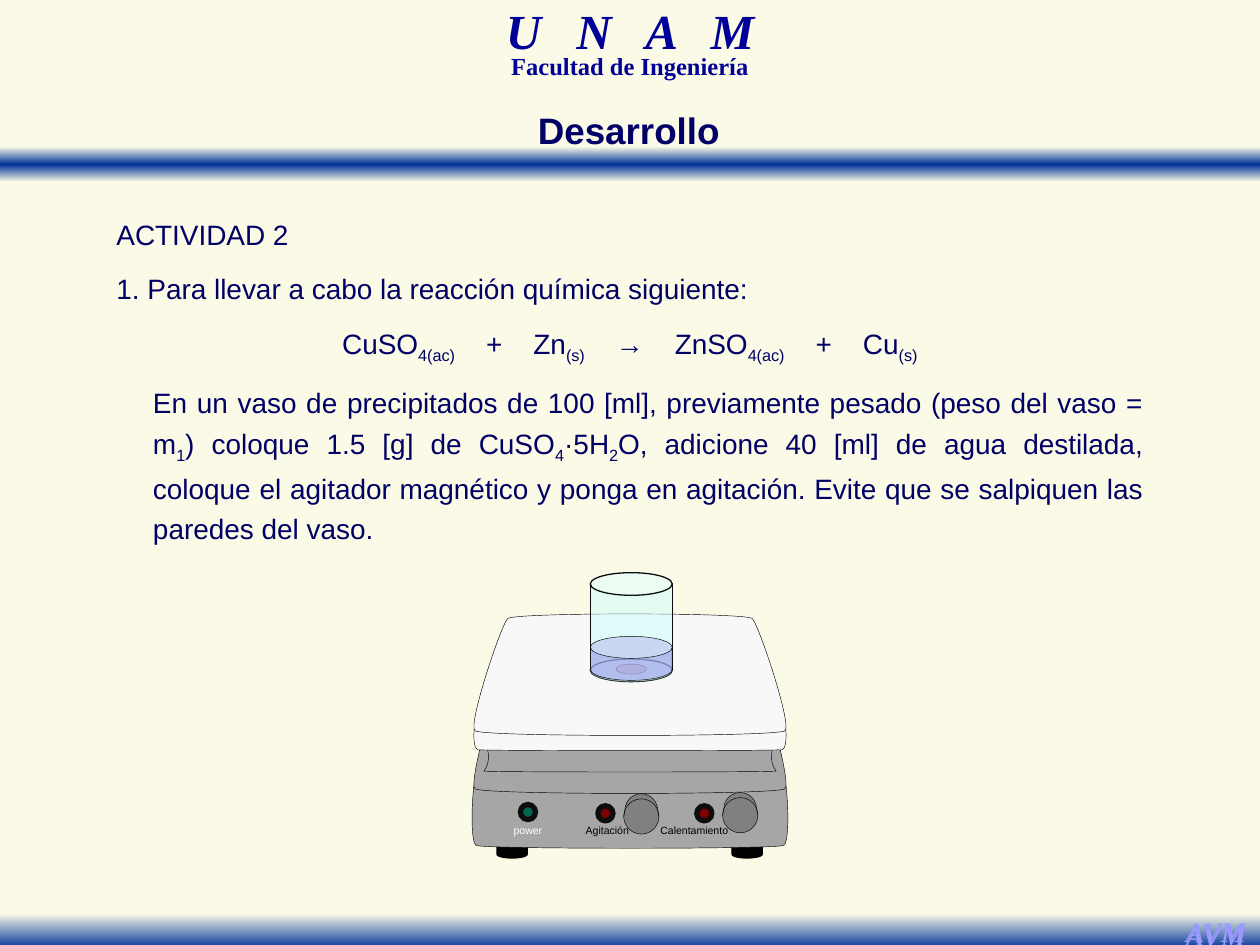
from copy import deepcopy
from dataclasses import dataclass
from typing import NamedTuple, Optional

from lxml import etree
from pptx import Presentation
from pptx.dml.color import RGBColor
from pptx.enum.shapes import MSO_CONNECTOR, MSO_SHAPE
from pptx.enum.text import MSO_ANCHOR, MSO_AUTO_SIZE, PP_ALIGN
from pptx.oxml.ns import qn
from pptx.util import Inches, Pt

RECT, OVAL, CAN = MSO_SHAPE.RECTANGLE, MSO_SHAPE.OVAL, MSO_SHAPE.CAN
STRAIGHT = MSO_CONNECTOR.STRAIGHT
CENTER, JUSTIFY = PP_ALIGN.CENTER, PP_ALIGN.JUSTIFY
TOP = MSO_ANCHOR.TOP
GROW = MSO_AUTO_SIZE.SHAPE_TO_FIT_TEXT

# The slide is a grid of 1000 columns by 750 rows of square cells.
COLS, ROWS = 1000, 750
CELL = Inches(0.01)
HAIR, THIN, RIM = 0.25, 0.75, 3

COLORS = {
    "cream": "FAFAE6", "band": "003399", "school": "000099", "initials": "9999FF",
    "text": "000066", "black": "000000", "white": "FFFFFF", "ink": "0D0D0D",
    "housing": "A6A6A6", "plate": "F8F8F8", "knob": "808080", "green": "00664D",
    "red": "800000", "glass": "CCFFFF", "liquid": "8585E0", "bar": "E0E0E0",
    "bar edge": "858585",
}


class Box(NamedTuple):
    col: float
    row: float
    cols: float
    rows: float


class Run(NamedTuple):
    text: str
    subscript: bool = False
    tracking: float = 0


@dataclass(frozen=True)
class Style:
    size: float
    color: str
    font: str = "Arial"
    bold: bool = False
    italic: bool = False


@dataclass(frozen=True)
class Panel:
    """Left half of a curved outline, in cells; the right half is its mirror image."""
    fill: str
    box: Box
    bottom: tuple
    side_low: tuple
    side_high: tuple
    top: tuple
    top_handle: tuple
    bottom_handle: tuple


def cells(*values: float) -> list:
    return [round(value * CELL) for value in values]


def rgb(name: str) -> RGBColor:
    return RGBColor.from_string(COLORS[name])


def write(paragraph, runs: list, style: Style, align=CENTER, spacing: float = 1) -> None:
    paragraph.alignment, paragraph.line_spacing = align, spacing
    paragraph.space_before = Pt(0)
    for part in runs:
        run = paragraph.add_run()
        run.text = part.text
        font = run.font
        font.name, font.size = style.font, Pt(style.size)
        font.bold, font.italic = style.bold, style.italic
        font.color.rgb = rgb(style.color)
        properties = run._r.get_or_add_rPr()
        if part.subscript:
            properties.set("baseline", "-25000")
        if part.tracking:
            properties.set("spc", str(round(part.tracking * 100)))


def add_label(shapes, box: Box, runs: list, style: Style, spacing: float = 1, wrap: bool = False) -> None:
    frame = shapes.add_textbox(*cells(*box)).text_frame
    frame.word_wrap, frame.auto_size = wrap, GROW
    write(frame.paragraphs[0], runs, style, spacing=spacing)


def paint(shape, fill: Optional[str], line: Optional[str], width: float, alpha: int = 100) -> None:
    shape.shadow.inherit = False
    if fill:
        shape.fill.solid()
        shape.fill.fore_color.rgb = rgb(fill)
        if alpha < 100:
            color = shape._element.spPr.find(f"{qn('a:solidFill')}/{qn('a:srgbClr')}")
            etree.SubElement(color, qn("a:alpha")).set("val", str(alpha * 1000))
    else:
        shape.fill.background()
    if line:
        shape.line.color.rgb = rgb(line)
        shape.line.width = Pt(width)
    else:
        shape.line.fill.background()


def add_part(shapes, kind, box: Box, fill=None, line=None, width=HAIR, alpha=100, lid=None) -> None:
    shape = shapes.add_shape(kind, *cells(*box))
    if lid is not None:
        shape.adjustments[0] = lid
    paint(shape, fill, line, width, alpha)


def add_line(shapes, start: tuple, end: tuple, color: str, width: float) -> None:
    line = shapes.add_connector(STRAIGHT, *cells(*start, *end))
    line.line.color.rgb = rgb(color)
    line.line.width = Pt(width)
    etree.SubElement(line._element.spPr, qn("a:effectLst"))


def add_band(shapes, box: Box, stops: list) -> None:
    """Vertical gradient bar across the slide."""
    band = shapes.add_shape(RECT, *cells(*box))
    paint(band, None, None, 0)
    band.fill.gradient()
    band.fill.gradient_angle = 270
    stop_list = band._element.spPr.find(f".//{qn('a:gsLst')}")
    for _ in stops[2:]:
        stop_list.append(deepcopy(stop_list[0]))
    for stop, (position, color) in zip(band.fill.gradient_stops, stops):
        stop.position, stop.color.rgb = position, rgb(color)


def add_panel(shapes, panel: Panel) -> None:
    """Frame the panel's box, then give its path one Bézier curve per side."""
    def mirror(point: tuple) -> tuple:
        return COLS - point[0], point[1]

    col, row, cols, rows = panel.box
    builder = shapes.build_freeform(*cells(col, row), scale=1.0)
    builder.add_line_segments([cells(col + cols, row), cells(col + cols, row + rows), cells(col, row + rows)])
    outline = builder.convert_to_shape()
    path = outline._element.spPr.find(f".//{qn('a:path')}")
    for segment in list(path):
        path.remove(segment)
    left = [panel.side_low, panel.side_high, panel.top]
    top = [panel.top_handle, mirror(panel.top_handle), mirror(panel.top)]
    right = [mirror(panel.side_high), mirror(panel.side_low), mirror(panel.bottom)]
    base = [mirror(panel.bottom_handle), panel.bottom_handle, panel.bottom]
    for tag, points in (("a:moveTo", [panel.bottom]), *(("a:cubicBezTo", side) for side in (left, top, right, base))):
        segment = etree.SubElement(path, qn(tag))
        for point in points:
            x, y = cells(point[0] - col, point[1] - row)
            etree.SubElement(segment, qn("a:pt"), x=str(x), y=str(y))
    etree.SubElement(path, qn("a:close"))
    paint(outline, panel.fill, "black", HAIR)


def add_knob(shapes, col: float, row: float) -> None:
    for cap in (Box(col + 1, row - 4, 26, 26), Box(col, row, 28, 28)):
        add_part(shapes, OVAL, cap, "knob", "black")
    for low, high in ((col, col + 1), (col + 28, col + 27)):
        add_line(shapes, (low, row + 14), (high, row + 9), "black", HAIR)


def add_stirrer(shapes) -> None:
    for col in (581, 394.5):
        add_part(shapes, CAN, Box(col, 654, 24, 27), "black", "black", THIN)
    for panel in (
        Panel("housing", Box(375, 607, 250, 67), (378, 671), (372, 668), (375, 612), (380, 609), (385, 606), (382, 674)),
        Panel("housing", Box(376, 519, 248, 110), (377, 626), (371, 621), (398, 529), (403, 523), (407, 518), (381, 631)),
        Panel("housing", Box(384, 585, 231, 27), (384, 612), (393, 600), (382, 587), (387, 586), (391, 585), (389, 613)),
        Panel("plate", Box(376, 564, 248, 31), (379, 595), (374, 593), (376, 567), (381, 565), (386, 564), (383, 596)),
        Panel("plate", Box(376, 488, 248, 96), (377, 580), (371, 576), (398, 495), (403, 491), (407, 486), (381, 585)),
    ):
        add_panel(shapes, panel)
    for col, row in ((495, 634), (573.5, 633)):
        add_knob(shapes, col, row)
    for col, row, color in ((413, 638.5, "green"), (474.5, 639.5, "red"), (553, 639.5, "red")):
        add_part(shapes, OVAL, Box(col, row, 12, 12), color, "ink", RIM)
    for name, col, cols, color in (("power", 397.5, 43, "white"), ("Agitación", 454.5, 55, "black"),
                                   ("Calentamiento", 513.5, 75, "black")):
        add_label(shapes, Box(col, 649, cols, 20), [Run(name)], Style(6, color))


def add_beaker(shapes) -> None:
    left, width = 468.5, 65
    add_part(shapes, OVAL, Box(left, 523, width, 18), line="ink", width=THIN)
    add_part(shapes, CAN, Box(left, 454, width, 87), "glass", alpha=51, lid=0.271)
    add_part(shapes, OVAL, Box(left, 454.5, width, 18), line="ink", width=THIN)
    for col in (left + width, left):
        add_line(shapes, (col, 463), (col, 532), "ink", THIN)
    add_part(shapes, OVAL, Box(489, 527, 24, 8), "bar", "bar edge")
    add_part(shapes, CAN, Box(left, 505, width, 35), "liquid", "black", alpha=51, lid=0.5)


def place(placeholder, box: Box, wrap: bool):
    placeholder.left, placeholder.top, placeholder.width, placeholder.height = cells(*box)
    frame = placeholder.text_frame
    frame.word_wrap, frame.auto_size, frame.vertical_anchor = wrap, GROW, TOP
    return frame


def add_activity(frame) -> None:
    gap = Run(" ", tracking=13.3)
    equation = []
    for operator, formula, state in (("", "CuSO", "4(ac)"), ("+", "Zn", "(s)"),
                                     ("→", "ZnSO", "4(ac)"), ("+", "Cu", "(s)")):
        if operator:
            equation += [gap, Run(operator), gap]
        equation += [Run(formula), Run(state, True)]
    procedure = [
        Run("En un vaso de precipitados de 100 [ml], previamente pesado (peso del vaso = m"),
        Run("1", True), Run(") coloque 1.5 [g] de CuSO"), Run("4", True), Run("·5H"), Run("2", True),
        Run("O, adicione 40 [ml] de agua destilada, coloque el agitador magnético y ponga en "
            "agitación. Evite que se salpiquen las paredes del vaso."),
    ]
    for index, (runs, align, indent) in enumerate((
        ([Run("ACTIVIDAD 2")], JUSTIFY, 0),
        ([Run("1. Para llevar a cabo la reacción química siguiente:")], JUSTIFY, 0),
        (equation, CENTER, 0),
        (procedure, JUSTIFY, 29),
    )):
        paragraph = frame.add_paragraph() if index else frame.paragraphs[0]
        properties = paragraph._p.get_or_add_pPr()
        properties.set("marL", str(indent * CELL))
        properties.set("indent", "0")
        etree.SubElement(properties, qn("a:buNone"))
        paragraph.space_after = Pt(8)
        write(paragraph, runs, Style(16, "text"), align, 1.2)


def main() -> None:
    deck = Presentation()
    deck.slide_width, deck.slide_height = cells(COLS, ROWS)
    slide = deck.slides.add_slide(deck.slide_layouts[1])
    slide.background.fill.solid()
    slide.background.fill.fore_color.rgb = rgb("cream")
    shapes = slide.shapes

    add_band(shapes, Box(0, 116.5, COLS, 28), [(0, "cream"), (0.5, "band"), (1, "cream")])
    add_band(shapes, Box(0, 725, COLS, 28), [(0, "cream"), (1, "band")])
    serif = "Times New Roman"
    add_label(shapes, Box(304, 8, 392, 43), [Run("U N A ", tracking=6.6), Run("M")],
              Style(28, "school", serif, True, True), 0.7, True)
    add_label(shapes, Box(321, 42, 358, 26), [Run("Facultad de Ingeniería")],
              Style(14, "school", serif, True), 0.7, True)
    for row in (721, 724):
        add_label(shapes, Box(930.5, row, 69, 37), [Run("AVM")], Style(16, "initials", serif, True, True))

    heading = place(shapes.title, Box(416, 80.5, 166, 45), False)
    write(heading.paragraphs[0], [Run("Desarrollo")], Style(21, "text", bold=True))
    add_activity(place(slide.placeholders[1], Box(82.4, 162, 835, 270), True))

    apparatus = shapes.add_group_shape().shapes
    add_stirrer(apparatus)
    add_beaker(apparatus)
    deck.save("out.pptx")


if __name__ == "__main__":
    main()
